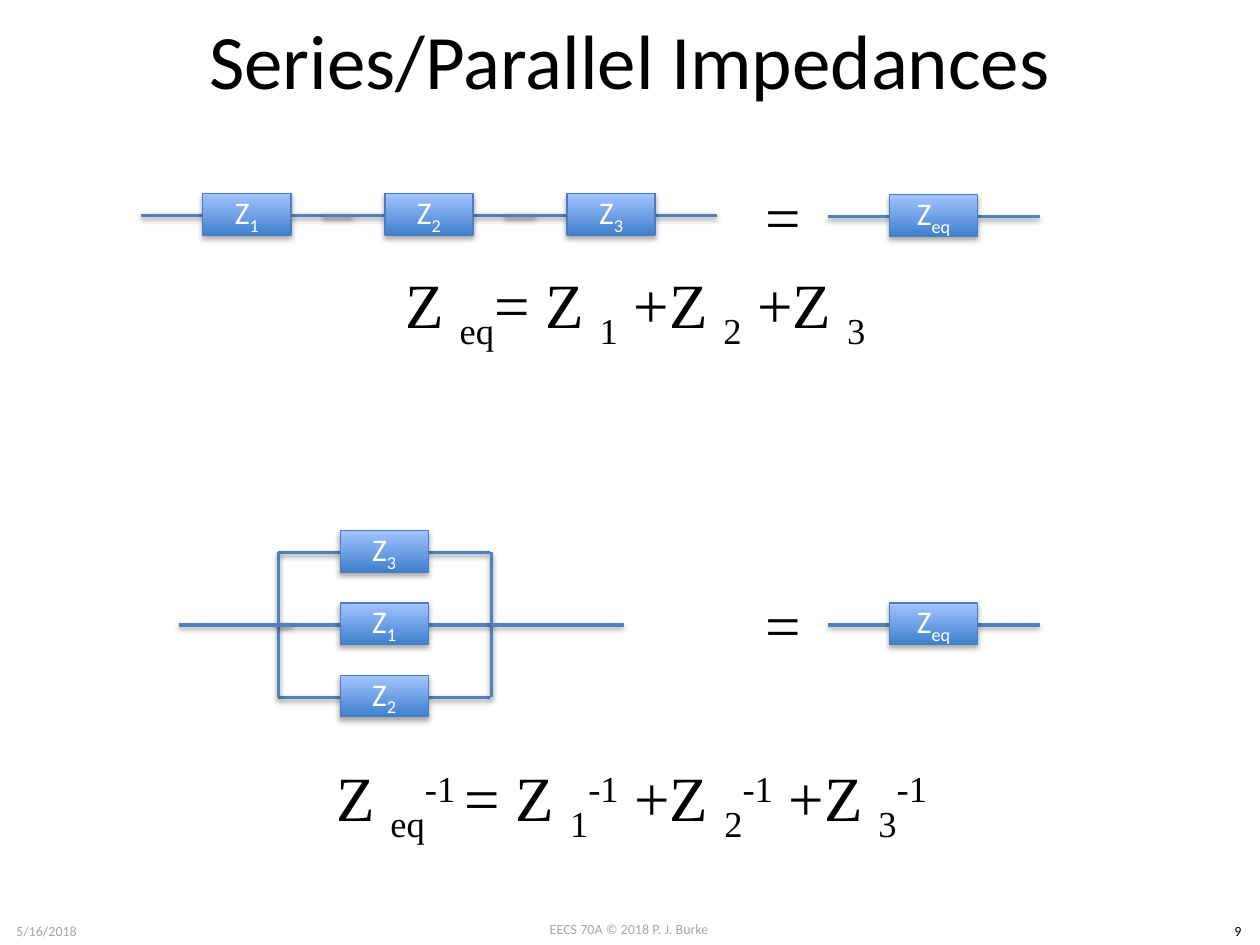
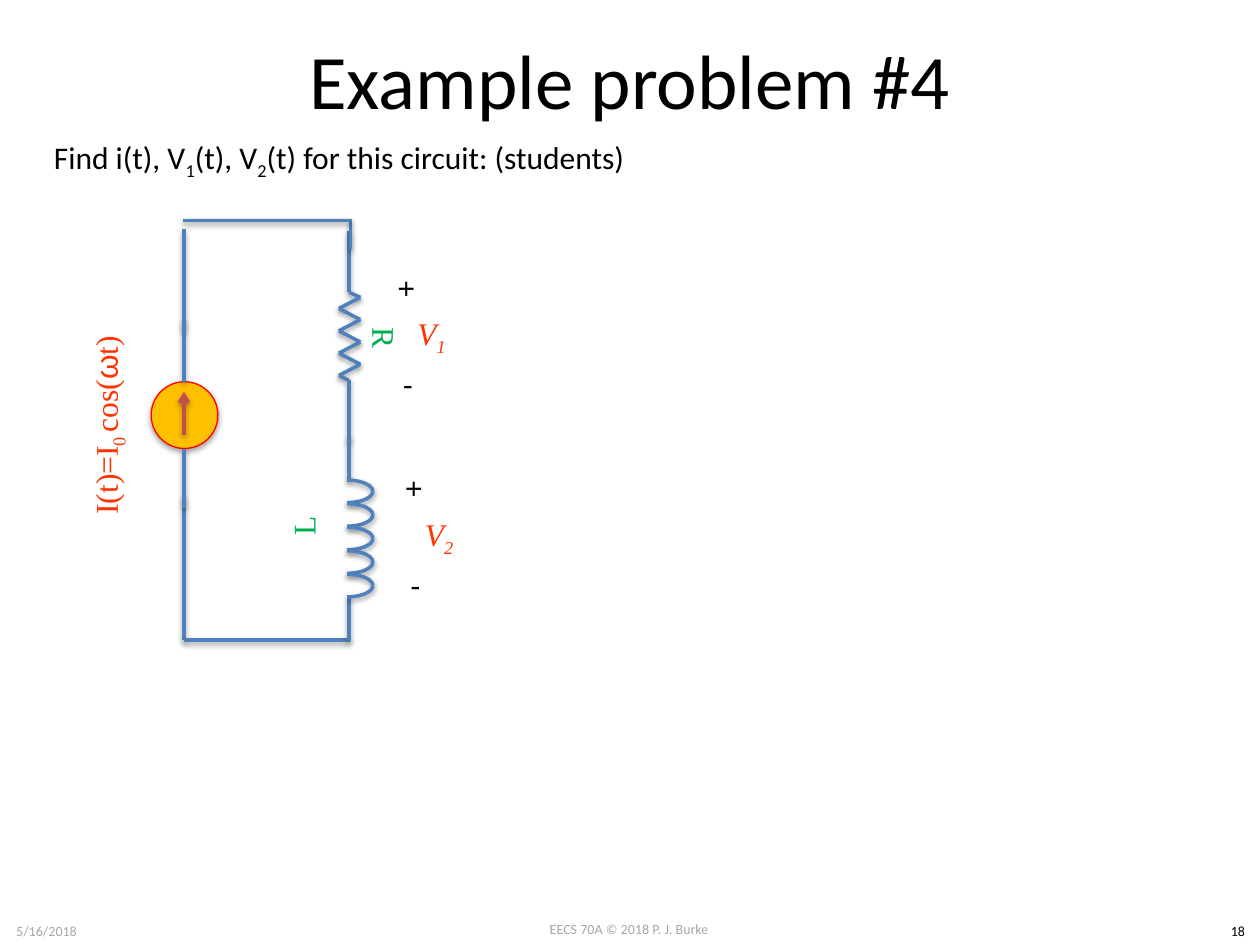
from dataclasses import dataclass
from itertools import pairwise

from lxml import etree
from pptx import Presentation
from pptx.dml.color import RGBColor
from pptx.enum.shapes import MSO_CONNECTOR, MSO_SHAPE
from pptx.enum.text import MSO_ANCHOR, PP_ALIGN
from pptx.oxml import parse_xml
from pptx.oxml.ns import nsdecls, qn
from pptx.slide import Slide
from pptx.util import Inches, Pt

STRAIGHT = MSO_CONNECTOR.STRAIGHT
RECTANGLE, OVAL, ARC = MSO_SHAPE.RECTANGLE, MSO_SHAPE.OVAL, MSO_SHAPE.ARC
LEFT, CENTER = PP_ALIGN.LEFT, PP_ALIGN.CENTER
TOP, MIDDLE = MSO_ANCHOR.TOP, MSO_ANCHOR.MIDDLE
TITLE_ONLY = 5

SANS, SERIF, GREEK = "Calibri", "Times New Roman", "Arial"
BLACK, WHITE, GRAY = "000000", "FFFFFF", "A6A6A6"
WIRE, BOX_EDGE, BOX_LOW, BOX_HIGH = "4F81BD", "4B7EBC", "3F80CE", "A4C4FF"
ORANGE_RED, GREEN = "FF3300", "00B050"
SOURCE_FILL, SOURCE_EDGE, SOURCE_ARROW = "FFC000", "FF0000", "C0504D"

BASELINES = {"_": "-25000", "^": "30000"}
LEAD, BOX_WIDTH, BOX_HEIGHT = 0.49, 0.7, 0.33

Point = tuple[float, float]


@dataclass(frozen=True)
class Label:
    """Text in parts split by |, with _ for subscript and ^ for superscript."""
    text: str
    left: float
    top: float
    width: float
    height: float
    size: int = 18
    font: str = SANS
    color: str = BLACK
    align: PP_ALIGN = LEFT
    anchor: MSO_ANCHOR = TOP
    rotation: int = 0
    italic: bool = False
    wrap: bool = True


@dataclass(frozen=True)
class Wire:
    start: Point
    end: Point
    color: str = WIRE
    arrow: bool = False


@dataclass(frozen=True)
class Impedance:
    subscript: str
    left: float
    axis: float


# Shared drawing helpers
def rgb(color: str) -> RGBColor:
    return RGBColor.from_string(color)


def add_shadow(shape, distance: int, opacity: int) -> None:
    shape._element.spPr.append(parse_xml(
        f'<a:effectLst {nsdecls("a")}><a:outerShdw blurRad="40000" '
        f'dist="{distance}" dir="5400000" rotWithShape="0"><a:srgbClr val="000000">'
        f'<a:alpha val="{opacity * 1000}"/></a:srgbClr></a:outerShdw></a:effectLst>'))


def style_line(shape, color: str, width: float) -> None:
    shape.line.color.rgb = rgb(color)
    shape.line.width = Pt(width)


def write_text(frame, text: str, size: int, font: str, color: str,
               align: PP_ALIGN, italic: bool = False) -> None:
    paragraph = frame.paragraphs[0]
    paragraph.alignment = align
    paragraph.font.size = Pt(size)
    paragraph.font.name = font
    paragraph.font.italic = italic
    paragraph.font.color.rgb = rgb(color)
    for part in text.split("|"):
        run = paragraph.add_run()
        baseline = BASELINES.get(part[0])
        run.text = part[1:] if baseline else part
        if baseline:
            run._r.get_or_add_rPr().set("baseline", baseline)
        if part == "ω":
            run.font.name = GREEK


def draw_label(slide: Slide, label: Label) -> None:
    box = slide.shapes.add_textbox(Inches(label.left), Inches(label.top),
                                   Inches(label.width), Inches(label.height))
    box.rotation = label.rotation
    box.text_frame.word_wrap = label.wrap
    box.text_frame.vertical_anchor = label.anchor
    write_text(box.text_frame, label.text, label.size, label.font, label.color,
               label.align, label.italic)


def draw_wire(slide: Slide, wire: Wire) -> None:
    line = slide.shapes.add_connector(
        STRAIGHT, *(Inches(value) for value in (*wire.start, *wire.end)))
    style_line(line, wire.color, 2)
    if wire.arrow:
        etree.SubElement(line.line._get_or_add_ln(), qn("a:tailEnd"), type="arrow")
    add_shadow(line, 20000, 38)


def draw_impedance(slide: Slide, item: Impedance) -> None:
    box_left = item.left + LEAD
    for lead_left in (item.left, box_left + BOX_WIDTH):
        draw_wire(slide, Wire((lead_left, item.axis), (lead_left + LEAD, item.axis)))
    box = slide.shapes.add_shape(
        RECTANGLE, Inches(box_left), Inches(item.axis - BOX_HEIGHT / 2 - 0.01),
        Inches(BOX_WIDTH), Inches(BOX_HEIGHT))
    box.fill.gradient()
    box.fill.gradient_angle = 90
    for stop, color in zip(box.fill.gradient_stops, (BOX_LOW, BOX_HIGH)):
        stop.color.rgb = rgb(color)
    style_line(box, BOX_EDGE, 0.75)
    add_shadow(box, 23000, 35)
    box.text_frame.vertical_anchor = MIDDLE
    write_text(box.text_frame, f"Z|_{item.subscript}", 18, SANS, WHITE, CENTER)


def start_slide(deck, title: str, title_height: float, number: int) -> Slide:
    slide = deck.slides.add_slide(deck.slide_layouts[TITLE_ONLY])
    heading = slide.shapes.title
    heading.left, heading.top = Inches(0.5), Inches(0)
    heading.width, heading.height = Inches(9), Inches(title_height)
    heading.text_frame.vertical_anchor = MIDDLE
    write_text(heading.text_frame, title, 44, SANS, BLACK, CENTER)
    for text, left, top, width, color in (
            ("EECS 70A © 2018 P. J. Burke", 3.83, 7.26, 2.33, GRAY),
            ("5/16/2018", 0, 7.27, 0.74, GRAY),
            (str(number), 9.65, 7.27, 0.35, BLACK)):
        draw_label(slide, Label(text, left, top, width, 0.24, size=8, color=color,
                                align=CENTER, wrap=False))
    return slide


# Slide with series and parallel combinations
def build_impedances(deck) -> None:
    slide = start_slide(deck, "Series/Parallel Impedances", 0.93, 9)
    series_axis, parallel_axis = 1.71, 4.96
    branch_left, branch_right, branch_gap = 2.21, 3.9, 0.575

    series = [Impedance(str(i + 1), 1.12 + 1.445 * i, series_axis) for i in range(3)]
    parallel = [Impedance(name, branch_left, parallel_axis + branch_gap * step)
                for name, step in (("1", 0), ("2", 1), ("3", -1))]
    equivalents = [Impedance("eq", 6.57, axis) for axis in (1.72, parallel_axis)]
    for item in series + parallel + equivalents:
        draw_impedance(slide, item)

    # Rails and outer leads of the parallel circuit
    for rail in (branch_left, branch_right):
        draw_wire(slide, Wire((rail, parallel_axis - branch_gap),
                              (rail, parallel_axis + branch_gap)))
    for start, end in ((2.32, 1.42), (branch_right, 4.95)):
        draw_wire(slide, Wire((start, parallel_axis), (end, parallel_axis)))

    # Equations
    for text, left, top, width in (
            ("Z |_eq|= Z |_1| +Z |_2| +Z |_3", 3.12, 2.06, 4.17),
            ("=", 5.98, 1.36, 0.59),
            ("=", 5.98, 4.6, 0.59),
            ("Z |_eq|^-1 |= Z |_1|^-1| +Z |_2|^-1| +Z |_3|^-1", 2.57, 5.97, 5.45)):
        draw_label(slide, Label(text, left, top, width, 0.71, size=36, font=SERIF))


# Parts of the example circuit
def draw_resistor(slide: Slide) -> None:
    center, left, right = 2.77, 2.69, 2.86
    bends = [(left if i % 2 else right, 2.36 + 0.62 / 7 * i) for i in range(8)]
    outline = [(center, 1.83), (center, 2.32), *bends, (center, 3.02), (center, 3.51)]
    for start, end in pairwise(outline):
        draw_wire(slide, Wire(start, end))


def draw_inductor(slide: Slide) -> None:
    for start, end in ((3.81, 3.46), (5.09, 4.74)):
        draw_wire(slide, Wire((2.77, start), (2.77, end)))
    for turn in range(5):
        for flipped in (False, True):
            arc = slide.shapes.add_shape(ARC, Inches(2.55), Inches(3.81 + 0.187 * turn),
                                         Inches(0.41), Inches(0.18))
            if flipped:
                arc._element.spPr.xfrm.set("flipV", "1")
            arc.fill.background()
            style_line(arc, WIRE, 2)
            add_shadow(arc, 20000, 38)


def draw_current_source(slide: Slide) -> None:
    source = slide.shapes.add_shape(OVAL, Inches(1.2), Inches(3.03),
                                    Inches(0.53), Inches(0.53))
    source.fill.solid()
    source.fill.fore_color.rgb = rgb(SOURCE_FILL)
    style_line(source, SOURCE_EDGE, 0.75)
    add_shadow(source, 23000, 35)
    for wire in (Wire((1.46, 3.45), (1.46, 3.11), SOURCE_ARROW, arrow=True),
                 Wire((1.46, 3.03), (1.46, 2.53)),
                 Wire((1.46, 3.56), (1.46, 4.03))):
        draw_wire(slide, wire)


# Slide with the example problem
def build_example(deck) -> None:
    slide = start_slide(deck, "Example problem #4", 1.25, 18)
    draw_label(slide, Label("Find i(t), V|_1|(t), V|_2|(t) for this circuit: (students)",
                            0.33, 1.05, 6.16, 0.4))
    draw_resistor(slide)
    for start, end in (((1.46, 3.94), (1.46, 5.08)), ((1.46, 5.08), (2.78, 5.08)),
                       ((2.78, 1.98), (2.78, 1.75)), ((2.79, 1.75), (1.45, 1.75)),
                       ((1.46, 2.63), (1.46, 1.82))):
        draw_wire(slide, Wire(start, end))
    draw_inductor(slide)
    draw_current_source(slide)

    # Component names
    for text, left, top, width, height, color, rotation in (
            ("R", 2.46, 2.32, 1.19, 0.73, GREEN, 90),
            ("L", 1.81, 3.81, 1.19, 0.73, GREEN, 270),
            ("I(t)=I|_0 |cos(|ω|t)", -0.2, 3.07, 2.11, 0.61, ORANGE_RED, 270)):
        draw_label(slide, Label(text, left, top, width, height, font=SERIF, color=color,
                                align=CENTER, anchor=MIDDLE, rotation=rotation))

    # Voltages with their polarity
    for name, left, top in (("1", 3.04, 2.1), ("2", 3.1, 3.69)):
        draw_label(slide, Label("+", left + 0.04, top, 0.33, 0.4, rotation=90, wrap=False))
        draw_label(slide, Label("-", left + 0.06, top + 0.75, 0.28, 0.4, wrap=False))
        draw_label(slide, Label(f"V|_{name}", left, top + 0.26, 0.77, 0.61, font=SERIF,
                                color=ORANGE_RED, align=CENTER, anchor=MIDDLE, italic=True))


def main() -> None:
    deck = Presentation()
    deck.slide_width, deck.slide_height = Inches(10), Inches(7.5)
    build_impedances(deck)
    build_example(deck)
    deck.save("out.pptx")


if __name__ == "__main__":
    main()
